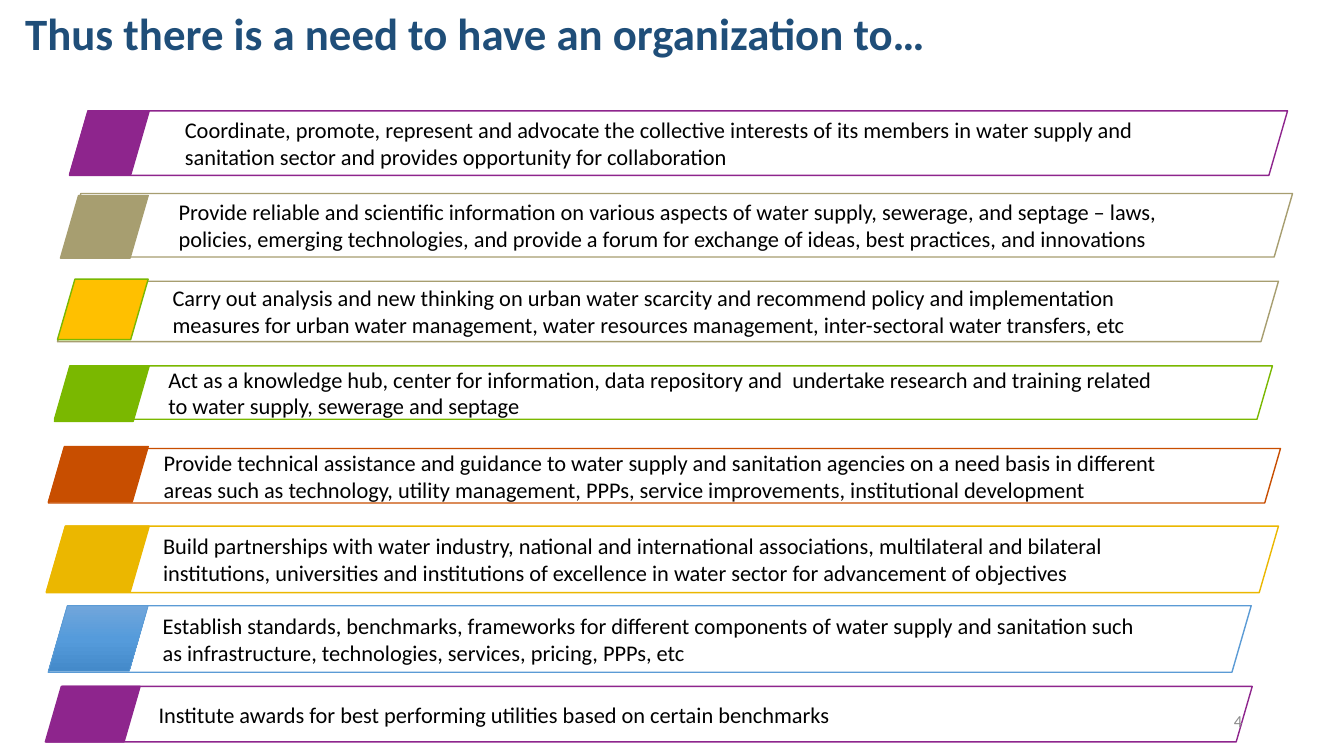
from copy import deepcopy

from pptx import Presentation
from pptx.dml.color import RGBColor as RGB
from pptx.enum.shapes import MSO_SHAPE as Shape
from pptx.enum.text import MSO_ANCHOR as Anchor, MSO_AUTO_SIZE as Fit, PP_ALIGN as Align
from pptx.oxml.ns import qn
from pptx.util import Inches, Pt

# Theme: colours, type sizes and the slant of the bars
theme = dict(
    font="Calibri", head=32, body=16, page=12, slant=0.289,
    navy="1F4E79", black="000000", grey="8C8C8C", white="FFFFFF",
    plum="8E258D", sand="A79E70", amber="FFC000", green="7AB800",
    rust="C84E00", gold="EBB700", blue="5B9BD5",
    fade=("71A6DB", "559BDB", "448ACA"),
)

# Slide and its grid of 1333 columns by 750 rows
deck = Presentation()
deck.slide_width, deck.slide_height = Inches(13.33), Inches(7.5)
col, row = deck.slide_width / 1333, deck.slide_height / 750
slide = deck.slides.add_slide(deck.slide_layouts[5])


def grid(x, y, w, h):
    return [round(n * unit) for n, unit in zip((x, y, w, h), (col, row, col, row))]


def write(frame, text, size, tint, bold=False, align=Align.LEFT, pad=None):
    look = dict(word_wrap=True, auto_size=Fit.NONE, vertical_anchor=Anchor.MIDDLE)
    if pad is not None:
        look.update({f"margin_{side}": pad for side in ("left", "right", "top", "bottom")})
    for key, val in look.items():
        setattr(frame, key, val)
    para = frame.paragraphs[0]
    para.alignment = align
    run = para.add_run()
    run.text = text
    for key, val in dict(name=theme["font"], size=Pt(theme[size]), bold=bold).items():
        setattr(run.font, key, val)
    run.font.color.rgb = RGB.from_string(theme[tint])
    return para


# Title
title = slide.shapes.title
for key, val in zip(("left", "top", "width", "height"), grid(15, 0, 1318, 72)):
    setattr(title, key, val)
para = write(title.text_frame, "Thus there is a need to have an organization to…",
             "head", "navy", bold=True)
para.line_spacing = 0.9

# Goals: bar box, tag box, bar line, tag fill, tag line, text
goals = [
    ((69, 110, 1208, 64), (69, 110, 79, 63), "plum", "plum", "plum",
     "Coordinate, promote, represent and advocate the collective interests of its members "
     "in water supply and sanitation sector and provides opportunity for collaboration"),
    ((62, 192, 1220, 63), (60, 194, 87, 62), "sand", "sand", "sand",
     "Provide reliable and scientific information on various aspects of water supply, "
     "sewerage, and septage – laws, policies, emerging technologies, and provide a forum "
     "for exchange of ideas, best practices, and innovations"),
    ((57, 279, 1211, 60), (57, 277, 90, 60), "sand", "amber", "green",
     "Carry out analysis and new thinking on urban water scarcity and recommend policy and "
     "implementation measures for urban water management, water resources management, "
     "inter-sectoral water transfers, etc"),
    ((54, 363, 1208, 53), (54, 363, 94, 55), "green", "green", "green",
     "Act as a knowledge hub, center for information, data repository and  undertake "
     "research and training related to water supply, sewerage and septage"),
    ((48, 445, 1222, 54), (48, 443, 99, 55), "rust", "rust", "rust",
     "Provide technical assistance and guidance to water supply and sanitation agencies on "
     "a need basis in different areas such as technology, utility management, PPPs, "
     "service improvements, institutional development"),
    ((46, 522, 1222, 66), (46, 522, 102, 65), "gold", "gold", "gold",
     "Build partnerships with water industry, national and international associations, "
     "multilateral and bilateral institutions, universities and institutions of excellence "
     "in water sector for advancement of objectives"),
    ((48, 601, 1193, 66), (48, 601, 99, 65), "blue", "fade", "blue",
     "Establish standards, benchmarks, frameworks for different components of water supply "
     "and sanitation such as infrastructure, technologies, services, pricing, PPPs, etc"),
    ((45, 681, 1197, 55), (46, 681, 93, 55), "plum", "plum", "plum",
     "Institute awards for best performing utilities based on certain benchmarks"),
]

for bar, tag, edge, fill, rim, text in goals:
    for box, paint, line in ((bar, "white", edge), (tag, fill, rim)):
        part = slide.shapes.add_shape(Shape.PARALLELOGRAM, *grid(*box))
        part.adjustments[0] = theme["slant"]
        part.shadow.inherit = False
        part.line.color.rgb = RGB.from_string(theme[line])
        part.line.width = Pt(0.5 if paint == "fade" else 1)
        if paint == "fade":
            # Three stops running from top to bottom
            part.fill.gradient()
            part.fill.gradient_angle = 270
            stops = part._element.spPr.find(qn("a:gradFill")).find(qn("a:gsLst"))
            stops.insert(1, deepcopy(stops[0]))
            for stop, tint, spot in zip(part.fill.gradient_stops, theme["fade"], (0, 0.5, 1)):
                stop.color.rgb = RGB.from_string(tint)
                stop.position = spot
        else:
            part.fill.solid()
            part.fill.fore_color.rgb = RGB.from_string(theme[paint])
        if box is bar:
            write(part.text_frame, text, "body", "black", pad=Inches(0.06))

# Page number
page = slide.shapes.add_textbox(*grid(942, 695, 300, 40))
write(page.text_frame, "4", "page", "grey", align=Align.RIGHT)

deck.save("out.pptx")
